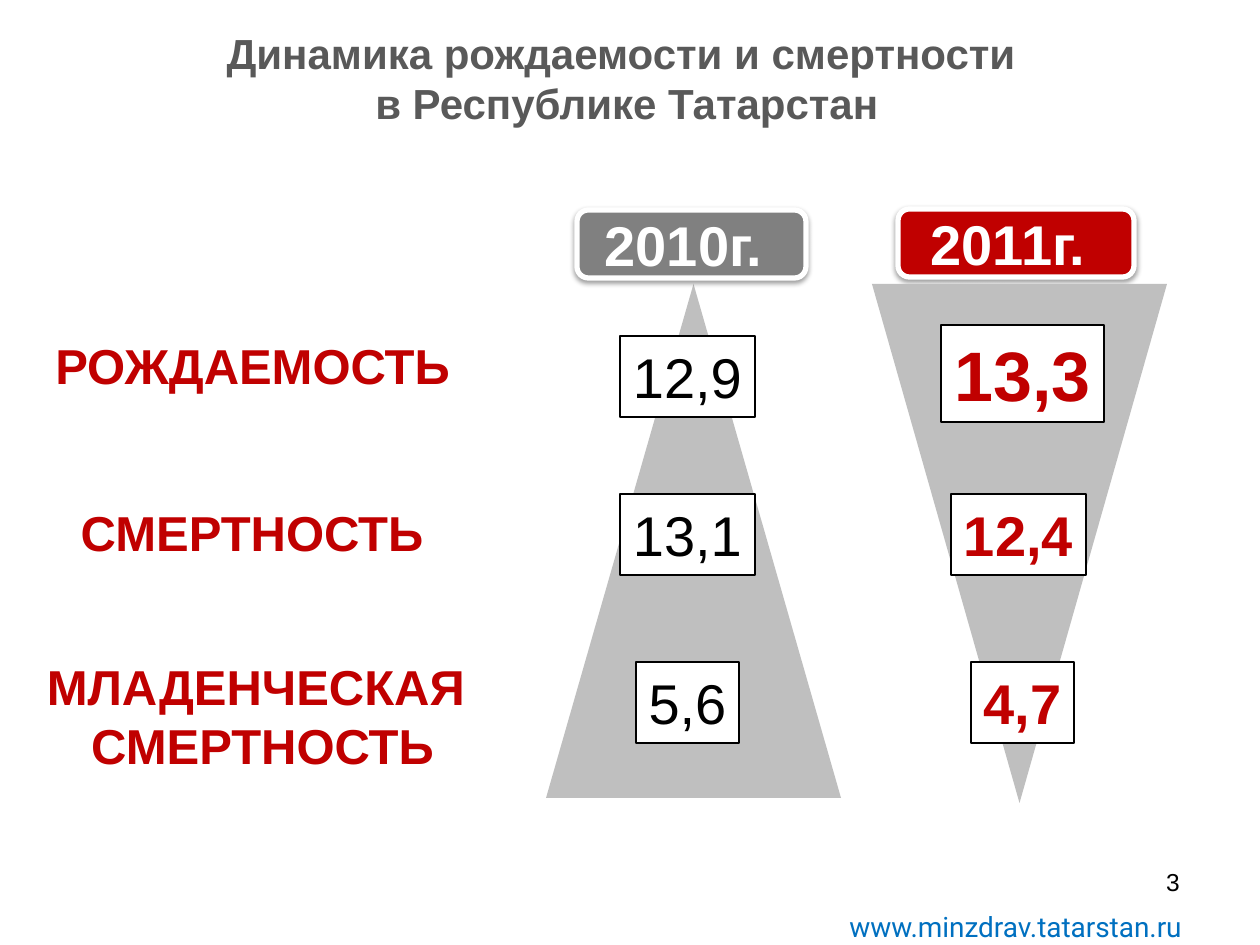
from lxml import etree
from pptx import Presentation
from pptx.dml.color import RGBColor
from pptx.enum.shapes import MSO_SHAPE
from pptx.enum.text import MSO_ANCHOR, PP_ALIGN
from pptx.oxml.ns import qn
from pptx.util import Emu, Pt

PX_PER_INCH = 126
RED, GRAY, SILVER, BLUE = "C00000", "808080", "BFBFBF", "0070C0"
BLACK, WHITE, SLATE = "000000", "FFFFFF", "595959"


def px(length):
    return Emu(round(length * 914400 / PX_PER_INCH))


def color(value):
    return RGBColor.from_string(value)


class SlideBuilder:
    """Holds the text style and the current slide, and draws its elements."""

    font = "Arial"

    def __init__(self, slide):
        self.slide = slide

    def set_text(self, shape, text, size, ink, bold=False, align=PP_ALIGN.CENTER,
                 anchor=MSO_ANCHOR.TOP, wrap=False, font=None):
        frame = shape.text_frame
        frame.text = text
        frame.word_wrap = wrap
        frame.vertical_anchor = anchor
        for paragraph in frame.paragraphs:
            paragraph.alignment = align
            for run in paragraph.runs:
                run.font.name = font or self.font
                run.font.size = Pt(size)
                run.font.bold = bold
                run.font.color.rgb = color(ink)

    def text(self, box, text, size, ink, **style):
        self.set_text(self.slide.shapes.add_textbox(*map(px, box)), text, size, ink, **style)

    def shape(self, kind, box, fill, line=None, width=1):
        shape = self.slide.shapes.add_shape(kind, *map(px, box))
        shape.shadow.inherit = False
        shape.fill.solid()
        shape.fill.fore_color.rgb = color(fill)
        if line:
            shape.line.color.rgb = color(line)
            shape.line.width = Pt(width)
        else:
            shape.line.fill.background()
        return shape

    def triangle(self, box, rotation=0):
        self.shape(MSO_SHAPE.ISOSCELES_TRIANGLE, box, SILVER).rotation = rotation

    def year(self, box, text, fill):
        tag = self.shape(MSO_SHAPE.ROUNDED_RECTANGLE, box, fill, WHITE, 3)
        effects = tag._element.spPr.find(qn("a:effectLst"))
        shadow = etree.SubElement(effects, qn("a:outerShdw"), blurRad=str(Pt(3.1)),
                                  dist=str(Pt(1.6)), dir="5400000", rotWithShape="0")
        tint = etree.SubElement(shadow, qn("a:srgbClr"), val=BLACK)
        etree.SubElement(tint, qn("a:alpha"), val="38000")
        self.set_text(tag, text, 32, WHITE, bold=True, anchor=MSO_ANCHOR.MIDDLE)

    def rate(self, box, text, ink, bold, size=32):
        frame = self.shape(MSO_SHAPE.RECTANGLE, box, WHITE, BLACK)
        self.set_text(frame, text, size, ink, bold)


def main():
    presentation = Presentation()
    presentation.slide_width, presentation.slide_height = px(1260), px(945)
    builder = SlideBuilder(presentation.slides.add_slide(presentation.slide_layouts[6]))

    builder.text((837, 903, 372, 47), "www.minzdrav.tatarstan.ru", 16, BLUE,
                 align=PP_ALIGN.LEFT, font="Roboto")
    builder.triangle((546, 284, 295, 514))
    builder.text((898, 861, 294, 66), "3", 14, BLACK, align=PP_ALIGN.RIGHT, wrap=True)
    builder.text((54, 19, 1134, 117),
                 "Динамика рождаемости и смертности\v в Республике Татарстан",
                 24, SLATE, bold=True, anchor=MSO_ANCHOR.MIDDLE, wrap=True)

    builder.year((577, 210, 229, 68), "2010г. ", GRAY)
    builder.year((898, 209, 236, 68), "2011г. ", RED)

    rates_2010 = [(620, 336, 135, "12,9"), (620, 494, 135, "13,1"), (636, 662, 103, "5,6")]
    for left, top, width, value in rates_2010:
        builder.rate((left, top, width, 81), value, BLACK, False)

    builder.triangle((872, 284, 295, 519), 180)
    builder.rate((941, 325, 163, 97), "13,3", RED, True, 40)
    rates_2011 = [(951, 494, 135, "12,4"), (971, 662, 103, "4,7")]
    for left, top, width, value in rates_2011:
        builder.rate((left, top, width, 81), value, RED, True)

    indicators = [
        ((40, 329, 425, 72), "РОЖДАЕМОСТЬ"),
        ((66, 496, 372, 72), "СМЕРТНОСТЬ"),
        ((32, 650, 461, 131), "МЛАДЕНЧЕСКАЯ \nСМЕРТНОСТЬ"),
    ]
    for box, indicator in indicators:
        builder.text(box, indicator, 28, RED, bold=True)

    presentation.save("out.pptx")


if __name__ == "__main__":
    main()
